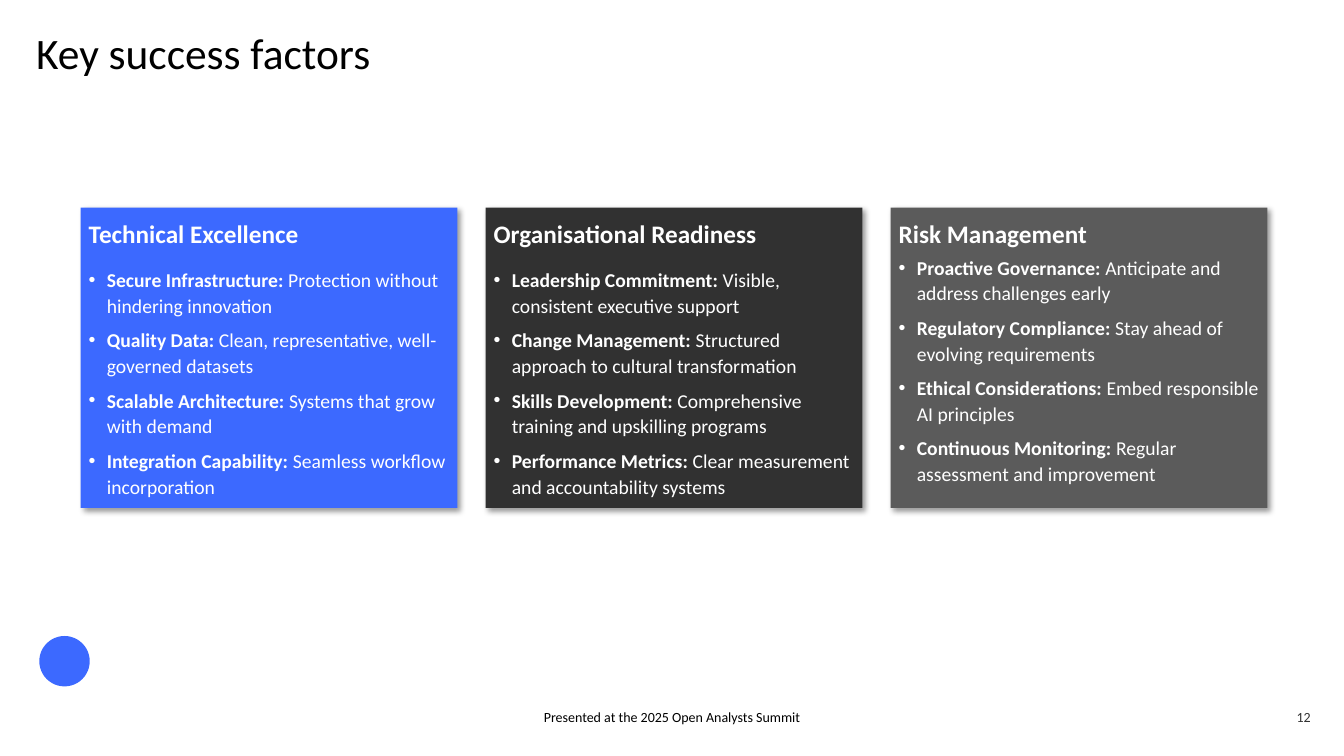
import lxml.etree
import pptx
import pptx.dml.color
import pptx.enum.shapes
import pptx.enum.text
import pptx.oxml
import pptx.oxml.ns
import pptx.util

Inches = pptx.util.Inches
Pt = pptx.util.Pt
RGBColor = pptx.dml.color.RGBColor
ALIGN = pptx.enum.text.PP_ALIGN
ANCHOR = pptx.enum.text.MSO_ANCHOR

BLUE = RGBColor(0x3C, 0x69, 0xFF)
CHARCOAL = RGBColor(0x31, 0x31, 0x31)
GREY = RGBColor(0x5B, 0x5B, 0x5B)
DARK = RGBColor(0x32, 0x32, 0x32)
BLACK = RGBColor(0, 0, 0)
WHITE = RGBColor(0xFF, 0xFF, 0xFF)

FONT = "Calibri"
SLIDE_WIDTH, SLIDE_HEIGHT = 13.33, 7.5
CARDS_BOX = (0.8, 2.06, 11.77, 2.98)
CARD_GAP = 0.28
CARD_INSET = 0.08
BULLET_INDENT = 0.18

# Heading, fill, space after the heading in points, factors
CARDS = [
    ("Technical Excellence", BLUE, 12, [
        ("Secure Infrastructure:", "Protection without hindering innovation"),
        ("Quality Data:", "Clean, representative, well-governed datasets"),
        ("Scalable Architecture:", "Systems that grow with demand"),
        ("Integration Capability:", "Seamless workflow incorporation"),
    ]),
    ("Organisational Readiness", CHARCOAL, 12, [
        ("Leadership Commitment:", "Visible, consistent executive support"),
        ("Change Management:", "Structured approach to cultural transformation"),
        ("Skills Development:", "Comprehensive training and upskilling programs"),
        ("Performance Metrics:", "Clear measurement and accountability systems"),
    ]),
    ("Risk Management", GREY, 3, [
        ("Proactive Governance:", "Anticipate and address challenges early"),
        ("Regulatory Compliance:", "Stay ahead of evolving requirements"),
        ("Ethical Considerations:", "Embed responsible AI principles"),
        ("Continuous Monitoring:", "Regular assessment and improvement"),
    ]),
]


def add_span(para, text, size, color, bold=False):
    span = para.add_run()
    span.text = text
    span.font.name = FONT
    span.font.size = Pt(size)
    span.font.bold = bold
    span.font.color.rgb = color


def prepare_frame(frame, inset, anchor):
    frame.word_wrap = True
    frame.vertical_anchor = anchor
    frame.margin_left = frame.margin_right = Inches(inset)
    frame.margin_top = frame.margin_bottom = Inches(inset)


def add_label(page, box, text, size, color, align=ALIGN.LEFT,
              anchor=ANCHOR.BOTTOM, line_spacing=1.0):
    """Place a single line of text in a box without margins."""
    frame = page.shapes.add_textbox(*map(Inches, box)).text_frame
    prepare_frame(frame, 0, anchor)
    para = frame.paragraphs[0]
    para.alignment = align
    para.line_spacing = line_spacing
    add_span(para, text, size, color)


def add_plain_shape(page, kind, box, color):
    shape = page.shapes.add_shape(kind, *map(Inches, box))
    shape.shadow.inherit = False
    shape.fill.solid()
    shape.fill.fore_color.rgb = color
    shape.line.fill.background()
    return shape


def add_soft_shadow(shape):
    effects = shape.element.spPr.find(pptx.oxml.ns.qn("a:effectLst"))
    effects.append(pptx.oxml.parse_xml(
        f'<a:outerShdw {pptx.oxml.ns.nsdecls("a")} blurRad="{Pt(4)}" '
        f'dist="{Pt(3)}" dir="2700000" algn="tl" rotWithShape="0">'
        '<a:srgbClr val="000000"><a:alpha val="40000"/></a:srgbClr>'
        '</a:outerShdw>'))


def make_bullet(para):
    properties = para._p.get_or_add_pPr()
    properties.set("marL", str(Inches(BULLET_INDENT)))
    properties.set("indent", str(-Inches(BULLET_INDENT)))
    for tag, name, value in (("a:buFont", "typeface", "Arial"),
                             ("a:buChar", "char", "•")):
        mark = lxml.etree.SubElement(properties, pptx.oxml.ns.qn(tag))
        mark.set(name, value)


def add_card(page, box, heading, color, heading_gap, factors):
    card = add_plain_shape(
        page, pptx.enum.shapes.MSO_SHAPE.RECTANGLE, box, color)
    add_soft_shadow(card)
    frame = card.text_frame
    prepare_frame(frame, CARD_INSET, ANCHOR.TOP)
    para = frame.paragraphs[0]
    para.space_after = Pt(heading_gap)
    add_span(para, heading, 18, WHITE, bold=True)
    for name, detail in factors:
        para = frame.add_paragraph()
        para.space_after = Pt(6)
        make_bullet(para)
        add_span(para, name + " ", 14, WHITE, bold=True)
        add_span(para, detail, 14, WHITE)
    for para in frame.paragraphs:
        para.alignment = ALIGN.LEFT
        para.line_spacing = 1.1


def add_card_row(page, box):
    left, top, width, height = box
    card_width = (width - CARD_GAP * (len(CARDS) - 1)) / len(CARDS)
    for column, card in enumerate(CARDS):
        card_left = left + column * (card_width + CARD_GAP)
        add_card(page, (card_left, top, card_width, height), *card)


def add_footer(page, box):
    """Place the emblem, the event line and the page number."""
    left, top, width, height = box
    add_plain_shape(page, pptx.enum.shapes.MSO_SHAPE.OVAL,
                    (left, top, 0.5, 0.5), BLUE)
    line_height, event_width, number_width = 0.2, 4.5, 0.46
    line_top = top + height - line_height
    add_label(page, ((SLIDE_WIDTH - event_width) / 2, line_top,
                     event_width, line_height),
              "Presented at the 2025 Open Analysts Summit", 10, BLACK,
              ALIGN.CENTER)
    add_label(page, (left + width - number_width, line_top,
                     number_width, line_height),
              "12", 10, DARK, ALIGN.RIGHT)


def main():
    deck = pptx.Presentation()
    deck.slide_width = Inches(SLIDE_WIDTH)
    deck.slide_height = Inches(SLIDE_HEIGHT)
    page = deck.slides.add_slide(deck.slide_layouts[6])
    add_label(page, (0.36, 0.32, 12.64, 1.11), "Key success factors", 31,
              BLACK, anchor=ANCHOR.TOP, line_spacing=0.9)
    add_card_row(page, CARDS_BOX)
    add_footer(page, (0.39, 6.31, 12.61, 0.89))
    deck.save("out.pptx")


if __name__ == "__main__":
    main()
